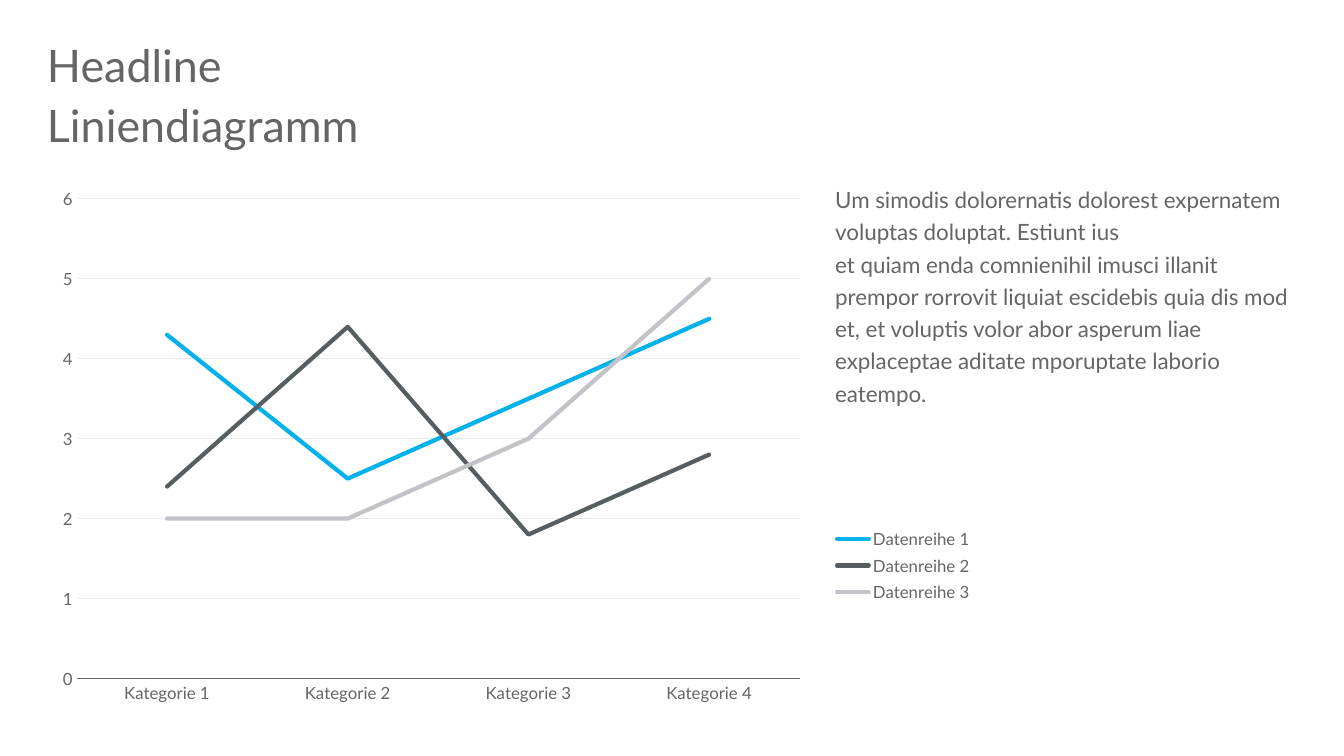
from dataclasses import dataclass

from lxml import etree
from pptx import Presentation
from pptx.chart.data import CategoryChartData
from pptx.dml.color import RGBColor
from pptx.enum.chart import XL_CHART_TYPE, XL_LEGEND_POSITION, XL_TICK_MARK
from pptx.enum.text import MSO_ANCHOR, MSO_AUTO_SIZE, PP_ALIGN
from pptx.oxml.ns import qn
from pptx.util import Emu, Inches, Pt

LINE_CHART = XL_CHART_TYPE.LINE
LEGEND_RIGHT = XL_LEGEND_POSITION.RIGHT
NO_TICKS = XL_TICK_MARK.NONE
TOP = MSO_ANCHOR.TOP
NO_AUTOFIT = MSO_AUTO_SIZE.NONE
LEFT = PP_ALIGN.LEFT
TITLE_ONLY = 5
EMU_PER_PX = 914400 / 100.8


@dataclass(frozen=True)
class Theme:
    font: str = "Lato"
    text: RGBColor = RGBColor(0x63, 0x65, 0x66)
    grid: RGBColor = RGBColor(0xE7, 0xE8, 0xE8)
    series: tuple = (
        RGBColor(0x00, 0xB1, 0xEB),
        RGBColor(0x57, 0x5E, 0x62),
        RGBColor(0xC2, 0xC2, 0xC8),
    )
    headline_size: int = 32
    body_size: int = 16
    chart_size: int = 12
    axis_width: float = 0.75
    series_width: int = 3


class SlideBuilder:
    def __init__(self, slide, theme):
        self.slide = slide
        self.theme = theme

    def box(self, *lengths):
        return [Emu(round(length * EMU_PER_PX)) for length in lengths]

    def style_font(self, font, size):
        font.name = self.theme.font
        font.size = Pt(size)
        font.bold = False
        font.color.rgb = self.theme.text

    def fill_text(self, shape, wording, size, line_spacing):
        frame = shape.text_frame
        frame.word_wrap = True
        frame.auto_size = NO_AUTOFIT
        frame.vertical_anchor = TOP
        frame.margin_left = frame.margin_right = 0
        frame.margin_top = frame.margin_bottom = 0
        frame.text = wording
        paragraph = frame.paragraphs[0]
        paragraph.alignment = LEFT
        paragraph.line_spacing = line_spacing
        paragraph.space_before = Pt(0)
        self.style_font(paragraph.font, size)

    def title(self, wording, *place):
        headline = self.slide.shapes.title
        headline.left, headline.top, headline.width, headline.height = self.box(*place)
        self.fill_text(headline, wording, self.theme.headline_size, 0.9)

    def text(self, wording, size, line_spacing, *place):
        passage = self.slide.shapes.add_textbox(*self.box(*place))
        self.fill_text(passage, wording, size, line_spacing)

    def set_layout(self, parent, index, **settings):
        for previous in parent.findall(qn("c:layout")):
            parent.remove(previous)
        layout = etree.Element(qn("c:layout"))
        manual = etree.SubElement(layout, qn("c:manualLayout"))
        for tag, setting in settings.items():
            etree.SubElement(manual, qn(f"c:{tag}")).set("val", str(setting))
        parent.insert(index, layout)

    def style_line(self, line, color, width):
        line.color.rgb = color
        line.width = Pt(width)

    def line_chart(self, categories, readings, *place):
        theme = self.theme
        data = CategoryChartData()
        data.categories = categories
        for name, values in readings.items():
            data.add_series(name, values)
        chart = self.slide.shapes.add_chart(LINE_CHART, *self.box(*place), data).chart
        chart.has_title = False
        self.style_font(chart.font, theme.chart_size)

        for series, color in zip(chart.plots[0].series, theme.series):
            series.smooth = False
            self.style_line(series.format.line, color, theme.series_width)
            series.format.line._ln.set("cap", "rnd")
        chart.plots[0].vary_by_categories = False

        for axis in (chart.category_axis, chart.value_axis):
            axis.major_tick_mark = axis.minor_tick_mark = NO_TICKS
            self.style_font(axis.tick_labels.font, theme.chart_size)
        self.style_line(chart.category_axis.format.line, theme.text, theme.axis_width)
        scale = chart.value_axis
        scale.minimum_scale, scale.maximum_scale, scale.major_unit = 0, 6, 1
        scale.format.line.fill.background()
        scale.has_major_gridlines = True
        self.style_line(scale.major_gridlines.format.line, theme.grid, theme.axis_width)

        chart.has_legend = True
        chart.legend.position = LEGEND_RIGHT
        chart.legend.include_in_layout = False
        self.style_font(chart.legend.font, theme.chart_size)
        edges = {"xMode": "edge", "yMode": "edge"}
        plot_area = chart._chartSpace.chart.plotArea
        self.set_layout(plot_area, 0, layoutTarget="inner", **edges,
                        x=0.035, y=0.035, w=0.752, h=0.883)
        self.set_layout(chart.legend._element, 1, **edges,
                        x=0.82, y=0.63, w=0.15, h=0.16)


def main():
    deck = Presentation()
    deck.slide_width, deck.slide_height = Inches(13.33), Inches(7.5)
    theme = Theme()
    builder = SlideBuilder(deck.slides.add_slide(deck.slide_layouts[TITLE_ONLY]), theme)
    builder.title("Headline", 47, 44, 1249, 51)
    builder.text("Liniendiagramm", theme.headline_size, 1.0, 47, 98, 1249, 51)
    builder.line_chart(
        [f"Kategorie {number}" for number in range(1, 5)],
        {
            "Datenreihe 1": (4.3, 2.5, 3.5, 4.5),
            "Datenreihe 2": (2.4, 4.4, 1.8, 2.8),
            "Datenreihe 3": (2, 2, 3, 5),
        },
        43, 180, 961, 543,
    )
    builder.text(
        "Um simodis dolorernatis dolorest expernatem voluptas doluptat. Estiunt ius\v"
        "et quiam enda comnienihil imusci illanit prempor rorrovit liquiat escidebis "
        "quia dis mod et, et voluptis volor abor asperum liae explaceptae aditate "
        "mporuptate laborio eatempo.",
        theme.body_size, 1.2, 835, 181, 462, 302,
    )
    deck.save("out.pptx")


if __name__ == "__main__":
    main()
